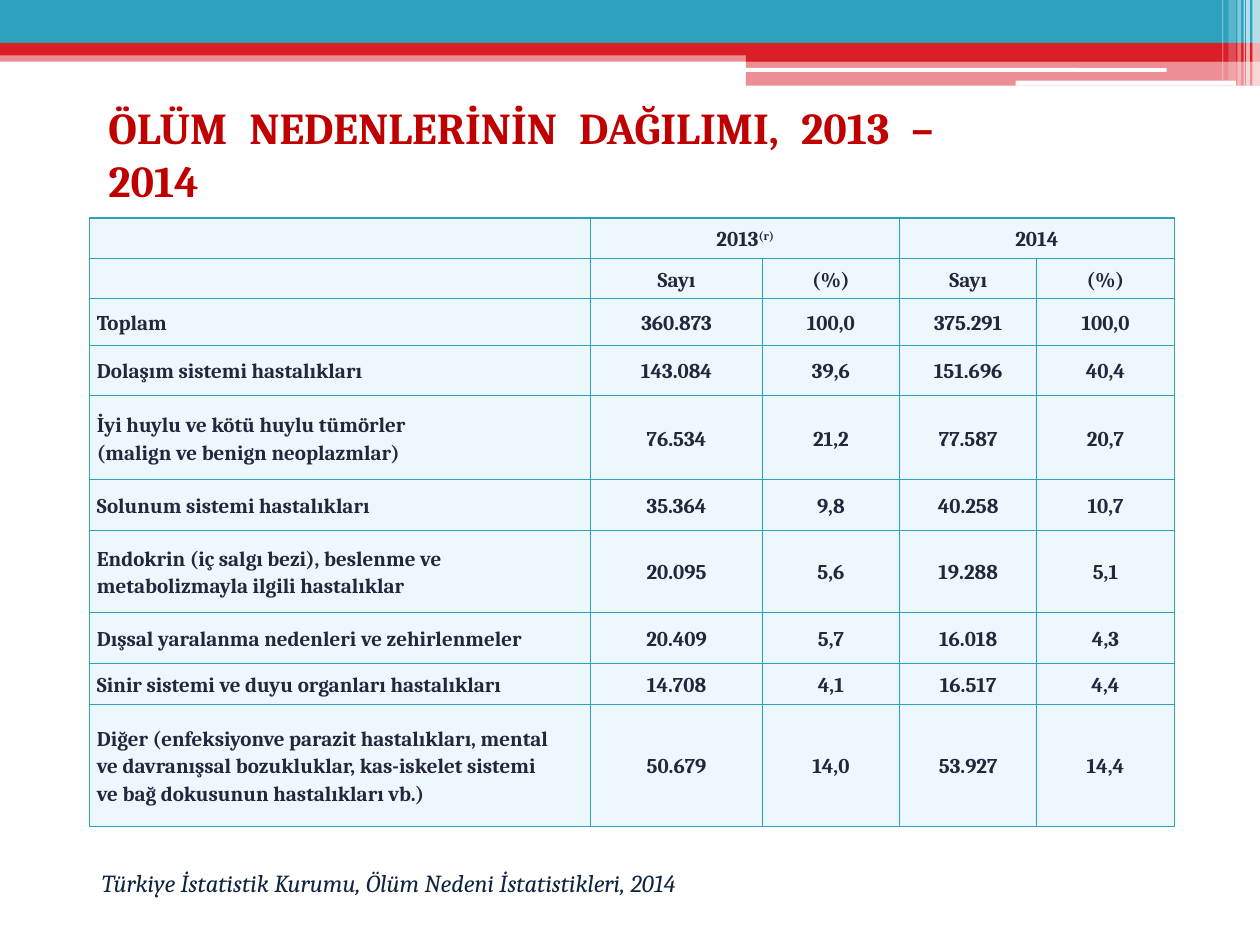
from pptx import Presentation
from pptx.dml.color import RGBColor
from pptx.enum.shapes import MSO_SHAPE
from pptx.enum.text import MSO_ANCHOR, MSO_AUTO_SIZE, PP_ALIGN
from pptx.oxml.ns import qn
from pptx.util import Inches, Pt
from lxml.etree import SubElement

FONT = "Cambria"
COLORS = {
    "teal": "2DA2BF",
    "red": "DA1F28",
    "white": "FFFFFF",
    "title": "C00000",
    "cell": "ECF7FE",
    "ink": "24263C",
    "source": "0F243E",
}
BANDS = [
    (0, 0.4, 10, 0.09, "red", 50),
    (0, 0, 10, 0.34, "teal", 100),
    (0, 0.34, 10, 0.1, "red", 100),
    (5.92, 0.39, 4.08, 0.1, "red", 100),
    (5.92, 0.48, 4.08, 0.2, "red", 50),
]
RULES = [(5.91, 0.54, 3.35, 0.03), (8.06, 0.64, 1.75, 0.04)]
STRIPES = [
    (9.94, 0.06, 0.68, 65),
    (9.89, 0.03, 0.68, 65),
    (9.87, 0.01, 0.68, 60),
    (9.82, 0.03, 0.68, 40),
    (9.75, 0.06, 0.64, 20),
    (9.7, 0.01, 0.64, 30),
]
COL_WIDTHS = [3.98, 1.36, 1.09, 1.09, 1.09]
ROW_HEIGHTS = [0.32, 0.32, 0.37, 0.4, 0.67, 0.4, 0.65, 0.41, 0.32, 0.97]
ROWS = [
    ["", "2013", "", "2014", ""],
    ["", "Sayı", "(%)", "Sayı", "(%)"],
    ["Toplam", "360.873", "100,0", "375.291", "100,0"],
    ["Dolaşım sistemi hastalıkları", "143.084", "39,6", "151.696", "40,4"],
    ["İyi huylu ve kötü huylu tümörler\n(malign ve benign neoplazmlar)",
     "76.534", "21,2", "77.587", "20,7"],
    ["Solunum sistemi hastalıkları", "35.364", "9,8", "40.258", "10,7"],
    ["Endokrin (iç salgı bezi), beslenme ve\nmetabolizmayla ilgili hastalıklar",
     "20.095", "5,6", "19.288", "5,1"],
    ["Dışsal yaralanma nedenleri ve zehirlenmeler", "20.409", "5,7", "16.018", "4,3"],
    ["Sinir sistemi ve duyu organları hastalıkları", "14.708", "4,1", "16.517", "4,4"],
    ["Diğer (enfeksiyonve parazit hastalıkları, mental\n"
     "ve davranışsal bozukluklar, kas-iskelet sistemi\n"
     "ve bağ dokusunun hastalıkları vb.)",
     "50.679", "14,0", "53.927", "14,4"],
]


def rgb(name):
    return RGBColor.from_string(COLORS[name])


def style_run(r, size, color, bold=False, italic=False):
    r.font.name = FONT
    r.font.size = Pt(size)
    r.font.bold = bold
    r.font.italic = italic
    r.font.color.rgb = rgb(color)


def add_bar(s, left, top, width, height, color, alpha=100, kind=MSO_SHAPE.RECTANGLE):
    sp = s.shapes.add_shape(kind, Inches(left), Inches(top), Inches(width), Inches(height))
    sp.shadow.inherit = False
    sp.fill.solid()
    sp.fill.fore_color.rgb = rgb(color)
    sp.line.fill.background()
    if alpha < 100:
        clr = sp.fill._xPr.find(qn("a:solidFill"))[0]
        SubElement(clr, qn("a:alpha")).set("val", str(alpha * 1000))


def add_header(s):
    for band in BANDS:
        add_bar(s, *band)
    for rule in RULES:
        add_bar(s, *rule, "white", kind=MSO_SHAPE.ROUNDED_RECTANGLE)
    for left, width, height, alpha in STRIPES:
        add_bar(s, left, 0, width, height, "white", alpha)


def set_title(s, text):
    sp = s.shapes.title
    sp.left, sp.top, sp.width, sp.height = Inches(0.76), Inches(0.9), Inches(6.75), Inches(0.63)
    tf = sp.text_frame
    tf.text = text
    tf.word_wrap = True
    tf.auto_size = MSO_AUTO_SIZE.NONE
    tf.vertical_anchor = MSO_ANCHOR.MIDDLE
    p = tf.paragraphs[0]
    p.alignment = PP_ALIGN.JUSTIFY
    style_run(p.runs[0], 25.2, "title", bold=True)


def add_source(s, text):
    sp = s.shapes.add_textbox(Inches(0.71), Inches(6.84), Inches(6.59), Inches(0.34))
    tf = sp.text_frame
    tf.word_wrap = True
    tf.text = text
    style_run(tf.paragraphs[0].runs[0], 14, "source", italic=True)


def set_borders(cell):
    tc_pr = cell._tc.get_or_add_tcPr()
    for side in ("a:lnL", "a:lnR", "a:lnT", "a:lnB"):
        ln = SubElement(tc_pr, qn(side), w=str(Pt(0.75)))
        fill = SubElement(ln, qn("a:solidFill"))
        SubElement(fill, qn("a:srgbClr"), val=COLORS["teal"])


def fill_cell(cell, text, align):
    set_borders(cell)
    cell.fill.solid()
    cell.fill.fore_color.rgb = rgb("cell")
    cell.margin_left = cell.margin_right = Inches(0.06)
    cell.margin_top = cell.margin_bottom = 0
    cell.vertical_anchor = MSO_ANCHOR.MIDDLE
    cell.text_frame.text = text
    for p in cell.text_frame.paragraphs:
        p.alignment = align
        p.line_spacing = 1.15
        for r in p.runs:
            style_run(r, 12, "ink", bold=True)
        if not p.runs:
            SubElement(p._p, qn("a:endParaRPr"), sz="1200")


def add_superscript(cell, text):
    r = cell.text_frame.paragraphs[0].add_run()
    r.text = text
    style_run(r, 12, "ink", bold=True)
    r.font._element.set("baseline", "30000")


def add_deaths_table(s):
    frame = s.shapes.add_table(len(ROWS), len(COL_WIDTHS), Inches(0.71), Inches(1.73),
                               Inches(sum(COL_WIDTHS)), Inches(sum(ROW_HEIGHTS)))
    table = frame.table
    table.first_row = table.horz_banding = False
    for col, width in zip(table.columns, COL_WIDTHS):
        col.width = Inches(width)
    for row, height, texts in zip(table.rows, ROW_HEIGHTS, ROWS):
        row.height = Inches(height)
        for i, (cell, text) in enumerate(zip(row.cells, texts)):
            fill_cell(cell, text, PP_ALIGN.CENTER if i else PP_ALIGN.LEFT)
    for i in (1, 3):
        table.cell(0, i).merge(table.cell(0, i + 1))
    add_superscript(table.cell(0, 1), "(r)")


def main():
    prs = Presentation()
    prs.slide_width, prs.slide_height = Inches(10), Inches(7.5)
    s = prs.slides.add_slide(prs.slide_layouts[5])
    add_header(s)
    set_title(s, "ÖLÜM NEDENLERİNİN DAĞILIMI, 2013 – 2014")
    add_source(s, "Türkiye İstatistik Kurumu, Ölüm Nedeni İstatistikleri, 2014")
    add_deaths_table(s)
    prs.save("out.pptx")


if __name__ == "__main__":
    main()
